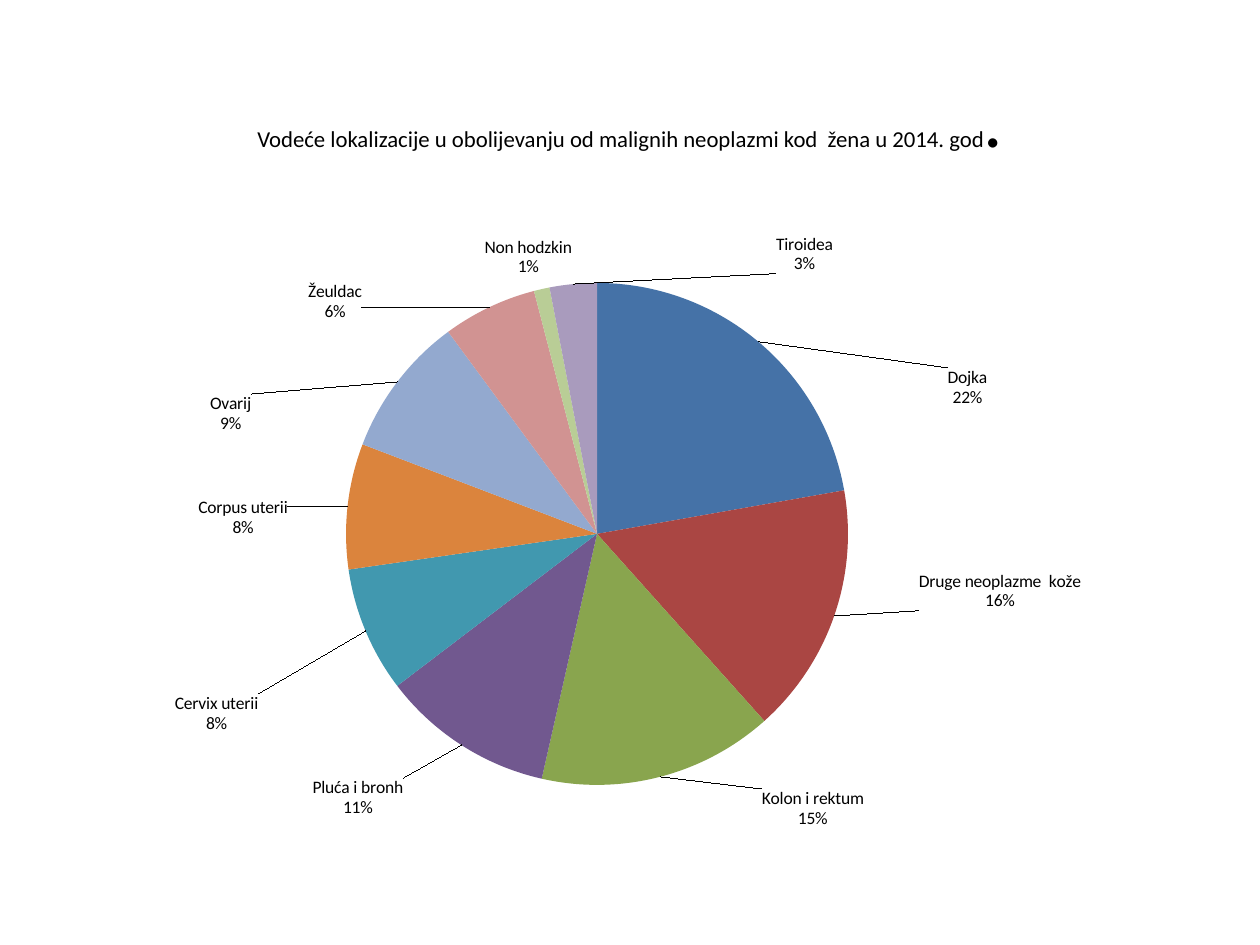
import math
from pptx import Presentation, util as u
from pptx.chart import data as cd
from pptx.dml import color
from pptx.enum import chart as ce, text
from pptx.oxml import parse_xml
from pptx.oxml.ns import nsdecls, qn

PX = 914400 / 126
BOX = (63, 220, 1134, 624)
MID = (597, 534)
RAD = 251
HIGH = 38
SITES = [
    ("Dojka", 22, "4572A7", 963, 394, 40),
    ("Druge neoplazme  kože", 16, "AA4643", 993, 588, 162),
    ("Kolon i rektum", 15, "89A54E", 811, 801, 102),
    ("Pluća i bronh", 11, "71588F", 362, 791, 90),
    ("Cervix uterii", 8, "4198AF", 223, 710, 84),
    ("Corpus uterii", 8, "DB843D", 250, 519, 90),
    ("Ovarij", 9, "93A9CF", 236, 419, 42),
    ("Žeuldac", 6, "D19392", 338, 309, 54),
    ("Non hodzkin", 1, "B9CD96", 530, 265, 87),
    ("Tiroidea", 3, "A99BBD", 805, 262, 57),
]


def px(*vals):
    return [u.Emu(round(v * PX)) for v in vals]


def rgb(code):
    return color.RGBColor.from_string(code)


def add_run(para, words, size):
    run = para.add_run()
    run.text = words
    run.font.name = "Calibri"
    run.font.size = u.Pt(size)
    run.font.color.rgb = rgb("000000")


def add_title(slide):
    frame = slide.shapes.add_textbox(*px(63, 38, 1134, 157)).text_frame
    frame.word_wrap = True
    frame.vertical_anchor = text.MSO_ANCHOR.MIDDLE
    para = frame.paragraphs[0]
    para.alignment = text.PP_ALIGN.CENTER
    add_run(para, "Vodeće lokalizacije u obolijevanju od malignih neoplazmi kod  žena u 2014. god", 13)
    add_run(para, ".", 44)


def layout(inner, **ratios):
    tags = '<c:layoutTarget val="inner"/><c:xMode val="edge"/><c:yMode val="edge"/>' if inner else ""
    tags += "".join(f'<c:{key} val="{val:.4f}"/>' for key, val in ratios.items())
    return f'<c:layout {nsdecls("c")}><c:manualLayout>{tags}</c:manualLayout></c:layout>'


def shift(turn, x, y, wide):
    dx, dy = math.sin(turn), -math.cos(turn)
    left = x - math.copysign(wide / 2, dx) - MID[0] - RAD * dx
    top = y - math.copysign(HIGH / 2, dy) - MID[1] - RAD * dy
    return left / BOX[2], top / BOX[3]


def add_label(labels, idx, turn, spot):
    x, y = shift(turn, *spot)
    flags = {"LegendKey": 0, "Val": 0, "CatName": 1, "SerName": 0, "Percent": 1, "BubbleSize": 0}
    shows = "".join(f'<c:show{key} val="{val}"/>' for key, val in flags.items())
    labels._element.insert(idx, parse_xml(
        f'<c:dLbl {nsdecls("c")}><c:idx val="{idx}"/>{layout(False, x=x, y=y)}'
        f'<c:dLblPos val="outEnd"/>{shows}<c:separator>\n</c:separator></c:dLbl>'))


def add_pie(slide):
    data = cd.CategoryChartData()
    data.categories = [site[0] for site in SITES]
    data.add_series("Series 1", [site[1] for site in SITES])
    chart = slide.shapes.add_chart(ce.XL_CHART_TYPE.PIE, *px(*BOX), data).chart
    chart.has_title = chart.has_legend = False
    chart.font.name = "Calibri"
    chart.font.size = u.Pt(10)
    chart.font.color.rgb = rgb("000000")
    plot = chart.plots[0]
    plot.vary_by_categories = True
    area = chart._chartSpace.chart.plotArea
    for old in area.findall(qn("c:layout")):
        area.remove(old)
    area.insert(0, parse_xml(layout(
        True, x=(MID[0] - RAD - BOX[0]) / BOX[2], y=(MID[1] - RAD - BOX[1]) / BOX[3],
        w=2 * RAD / BOX[2], h=2 * RAD / BOX[3])))
    series = plot.series[0]
    labels = series.data_labels
    labels.show_value = False
    labels.show_category_name = labels.show_percentage = True
    total = sum(site[1] for site in SITES)
    done = 0
    for idx, (_, val, code, *spot) in enumerate(SITES):
        fill = series.points[idx].format.fill
        fill.solid()
        fill.fore_color.rgb = rgb(code)
        add_label(labels, idx, 2 * math.pi * (done + val / 2) / total, spot)
        done += val


def main():
    deck = Presentation()
    deck.slide_width, deck.slide_height = px(1260, 945)
    slide = deck.slides.add_slide(deck.slide_layouts[6])
    add_title(slide)
    add_pie(slide)
    deck.save("out.pptx")


if __name__ == "__main__":
    main()
